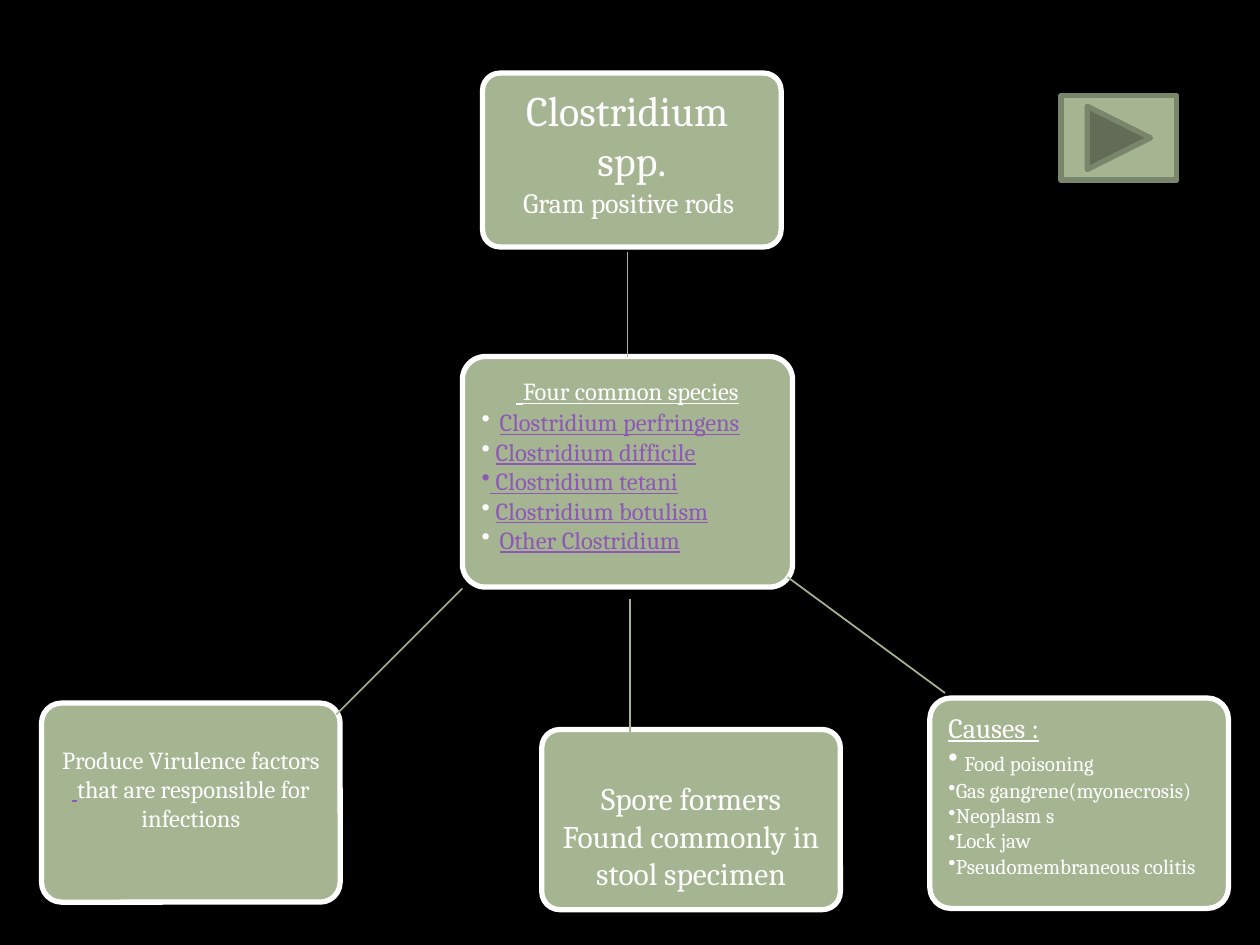
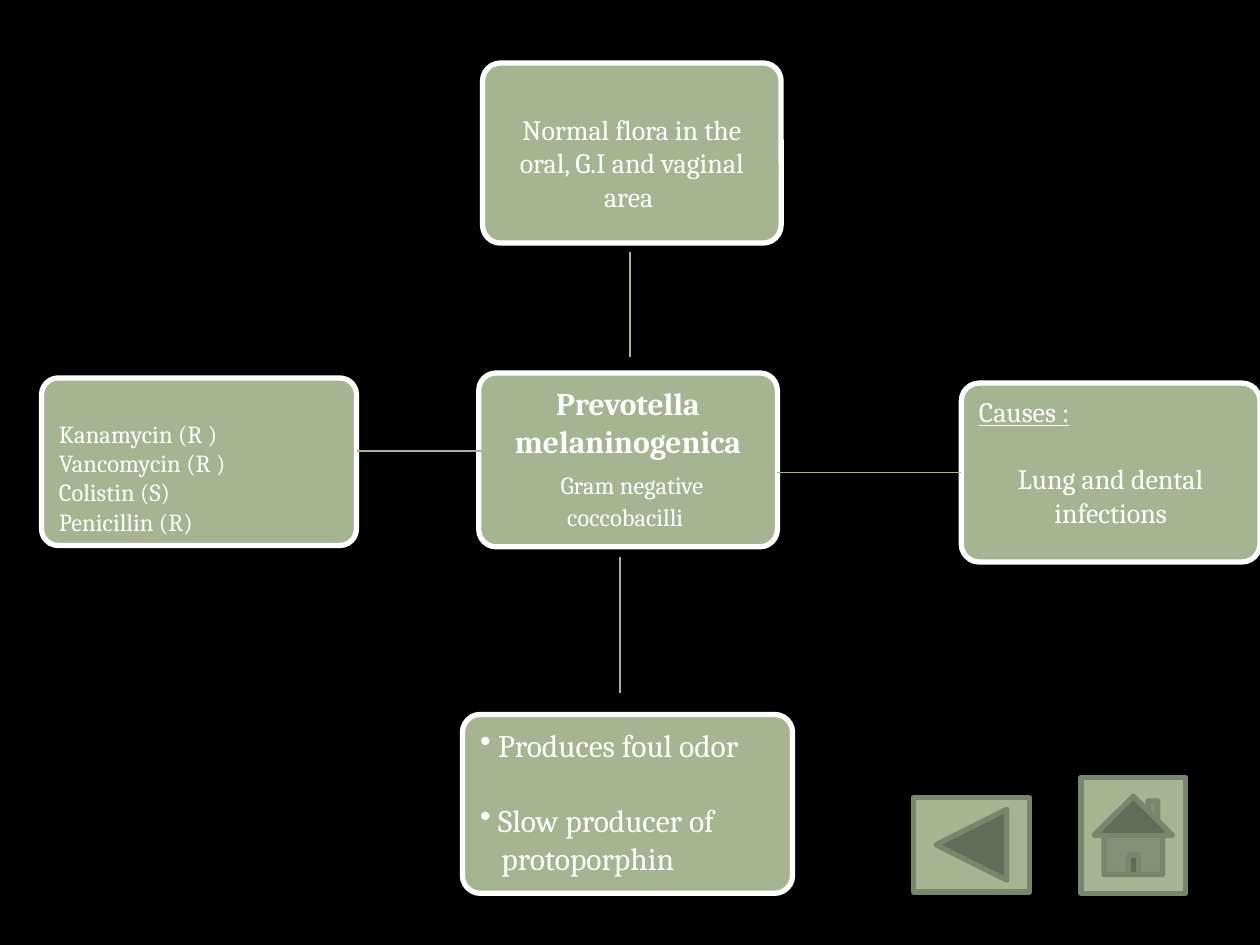
from lxml import etree
from pptx import Presentation
from pptx import util as u
from pptx.dml.color import RGBColor
from pptx.enum import shapes, text
from pptx.oxml import ns

BLACK = RGBColor(0x00, 0x00, 0x00)
WHITE = RGBColor(0xFF, 0xFF, 0xFF)
SAGE = RGBColor(0xA5, 0xB5, 0x92)
DARK_SAGE = RGBColor(0x7A, 0x86, 0x6C)
PURPLE = RGBColor(0x8E, 0x58, 0xB6)
FONT = "Cambria"
LEFT, CENTER = text.PP_ALIGN.LEFT, text.PP_ALIGN.CENTER
LINE_HEIGHT = 1.2

BULLET = {"bullet": True}
CENTERED = {"align": CENTER}
LINK = {"color": PURPLE, "underline": True}
UNDERLINED = {"underline": True}


def add_text(paragraph, words, size=14, color=WHITE, bold=False, underline=False):
    run = paragraph.add_run()
    run.text = words
    run.font.name = FONT
    run.font.size = u.Pt(size)
    run.font.color.rgb = color
    run.font.bold = bold
    run.font.underline = underline


def add_shape(slide, kind, place, line_color):
    shape = slide.shapes.add_shape(kind, *[u.Inches(value) for value in place])
    shape.shadow.inherit = False
    shape.fill.solid()
    shape.fill.fore_color.rgb = SAGE
    shape.line.color.rgb = line_color
    shape.line.width = u.Pt(3)
    return shape


# Boxes: name -> (place, size of the skipped first line, paragraphs)
# Paragraph: (layout, runs), run: (words, format)
clostridium_boxes = {
    "genus": ((3.83, 0.58, 2.37, 1.38), 0, [
        (CENTERED, [("Clostridium ", {"size": 24})]),
        (CENTERED, [("spp.", {"size": 24})]),
        (CENTERED, [("Gram positive rods ", {"size": 16})]),
    ]),
    "causes": ((7.38, 5.54, 2.37, 1.67), 0, [
        ({}, [("Causes :", {"size": 16, "underline": True})]),
        (BULLET, [(" ", {"size": 16}), ("Food poisoning", {"size": 12})]),
    ] + [
        (BULLET, [(cause, {"size": 12})])
        for cause in ("Gas gangrene(myonecrosis)", "Neoplasm s", "Lock jaw",
                      "Pseudomembraneous colitis")
    ]),
    "spores": ((4.3, 5.79, 2.37, 1.43), 18, [
        (CENTERED, [("Spore formers", {"size": 18})]),
        (CENTERED, [("Found commonly in stool specimen", {"size": 18})]),
    ]),
    "virulence": ((0.33, 5.58, 2.37, 1.58), 14, [
        (CENTERED, [("Produce Virulence factors ", {}), (" ", LINK),
                    ("that are responsible for infections", {})]),
    ]),
    "species": ((3.67, 2.83, 2.62, 1.83), 0, [
        (CENTERED, [(" ", {"size": 18, "underline": True}),
                    ("Four common species", UNDERLINED)]),
        ({"bullet": True, "hang": 0.1}, [(" ", {}), ("Clostridium perfringens", LINK)]),
        (BULLET, [(" ", {}), ("Clostridium difficile", LINK)]),
        (BULLET, [(" Clostridium tetani", LINK)]),
        (BULLET, [(" ", {}), ("Clostridium botulism", LINK)]),
        ({"bullet": True, "hang": 0.1}, [(" ", {}), ("Other Clostridium", LINK)]),
    ]),
}

prevotella_boxes = {
    "organism": ((3.8, 2.96, 2.37, 1.38), 0, [
        (CENTERED, [("Prevotella melaninogenica", {"size": 18, "bold": True})]),
        (CENTERED, [(" ", {"size": 20}), ("Gram negative coccobacilli ", {})]),
    ]),
    "features": ((3.67, 5.67, 2.62, 1.42), 0, [
        (BULLET, [(" Produces foul odor", {"size": 18})]),
        ({"bullet": True, "before": 18}, [(" Slow producer of", {"size": 18})]),
        ({"margin": 0.17}, [("protoporphin", {"size": 18})]),
    ]),
    "causes": ((7.63, 3.04, 2.37, 1.42), 0, [
        ({}, [("Causes :", {"size": 16, "underline": True})]),
        ({"align": CENTER, "before": 16}, [("Lung and dental infections", {"size": 16})]),
    ]),
    "flora": ((3.83, 0.5, 2.37, 1.43), 18, [
        (CENTERED, [("Normal flora in the oral, G.I and vaginal area ", {"size": 16})]),
    ]),
    "antibiotics": ((0.33, 3, 2.5, 1.33), 14, [
        ({}, [(result, {})])
        for result in ("Kanamycin (R )", "Vancomycin (R )", "Colistin (S)",
                       "Penicillin (R)")
    ]),
}

# Lines: (from x, from y, to x, to y, joined box and side at the end)
clostridium_lines = [
    (3.67, 4.67, 2.67, 5.67, None),
    (4.98, 2, 4.98, 2.83, ("species", 0)),
    (6.25, 4.58, 7.5, 5.5, None),
    (5, 4.75, 5, 5.83, None),
]
prevotella_lines = [
    (3.83, 3.58, 2.83, 3.58, None),
    (5, 2, 5, 2.83, None),
    (4.92, 4.42, 4.92, 5.5, None),
    (6.17, 3.75, 7.63, 3.75, ("causes", 1)),
]

# Navigation buttons
KIND = shapes.MSO_SHAPE
clostridium_buttons = [
    (KIND.ACTION_BUTTON_FORWARD_OR_NEXT, (8.42, 0.76, 0.92, 0.67)),
]
prevotella_buttons = [
    (KIND.ACTION_BUTTON_BACK_OR_PREVIOUS, (7.25, 6.33, 0.92, 0.75)),
    (KIND.ACTION_BUTTON_HOME, (8.58, 6.17, 0.83, 0.92)),
]

presentation = Presentation()
presentation.slide_width = u.Inches(10)
presentation.slide_height = u.Inches(7.5)

for boxes, lines, buttons in (
    (clostridium_boxes, clostridium_lines, clostridium_buttons),
    (prevotella_boxes, prevotella_lines, prevotella_buttons),
):
    slide = presentation.slides.add_slide(presentation.slide_layouts[6])
    slide.background.fill.solid()
    slide.background.fill.fore_color.rgb = BLACK

    # Rounded boxes with their text
    box_shapes = {}
    for name, (place, skipped_size, paragraphs) in boxes.items():
        box = add_shape(slide, KIND.ROUNDED_RECTANGLE, place, WHITE)
        box.adjustments[0] = 0.1
        box_shapes[name] = box
        frame = box.text_frame
        frame.word_wrap = True
        frame.vertical_anchor = text.MSO_ANCHOR.TOP
        frame.margin_top = u.Inches(0.05) + u.Pt(skipped_size * LINE_HEIGHT)
        for index, (layout, runs) in enumerate(paragraphs):
            paragraph = frame.add_paragraph() if index else frame.paragraphs[0]
            paragraph.alignment = layout.get("align", LEFT)
            paragraph.space_before = u.Pt(layout.get("before", 0) * LINE_HEIGHT)
            hang = layout.get("hang", 0)
            properties = paragraph._p.get_or_add_pPr()
            properties.set("marL", str(u.Inches(layout.get("margin", hang))))
            properties.set("indent", str(-u.Inches(hang)))
            if layout.get("bullet"):
                etree.SubElement(properties, ns.qn("a:buChar")).set("char", "•")
            for words, run_format in runs:
                add_text(paragraph, words, **run_format)

    # Connecting lines
    for *ends, joined in lines:
        connector = slide.shapes.add_connector(
            shapes.MSO_CONNECTOR.STRAIGHT, *[u.Inches(value) for value in ends])
        connector.line.color.rgb = SAGE
        connector.line.width = u.Pt(1)
        etree.SubElement(connector._element.spPr, ns.qn("a:effectLst"))
        if joined:
            connector.end_connect(box_shapes[joined[0]], joined[1])

    # Buttons
    for kind, place in buttons:
        add_shape(slide, kind, place, DARK_SAGE)

presentation.save("out.pptx")
